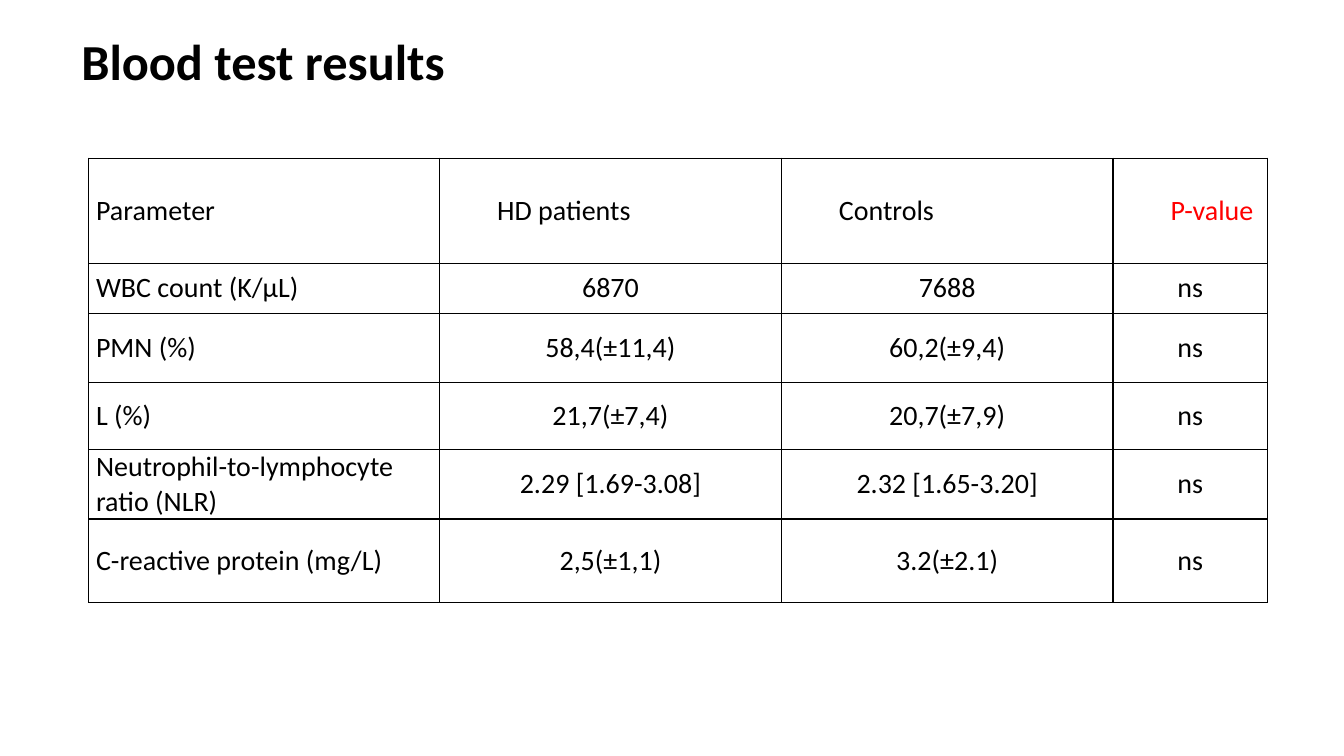
from dataclasses import dataclass

from lxml import etree
from pptx import Presentation
from pptx.dml.color import RGBColor
from pptx.enum import text
from pptx.oxml import ns
from pptx.util import Cm, Pt


@dataclass(frozen=True)
class Theme:
    font: str = "Calibri"
    ink: str = "000000"
    accent: str = "FF0000"
    title_size: int = 36
    body_size: int = 20
    border: float = 1


THEME = Theme()

COLUMN_WIDTHS = (8.84, 8.61, 8.36, 3.89)
ROW_HEIGHTS = (2.64, 1.27, 1.73, 1.7, 1.75, 2.11)
HEADER_INDENT = 1.27

RESULTS = (
    ("Parameter", "HD patients", "Controls", "P-value"),
    ("WBC count (K/μL)", "6870", "7688", "ns"),
    ("PMN (%)", "58,4(±11,4)", "60,2(±9,4)", "ns"),
    ("L (%)", "21,7(±7,4)", "20,7(±7,9)", "ns"),
    ("Neutrophil-to-lymphocyte ratio (NLR)", "2.29 [1.69-3.08]",
     "2.32 [1.65-3.20]", "ns"),
    ("C-reactive protein (mg/L)", "2,5(±1,1)", "3.2(±2.1)", "ns"),
)


def write(p, content, size, color=THEME.ink, bold=False):
    p.text = content
    for r in p.runs:
        r.font.name = THEME.font
        r.font.size = Pt(size)
        r.font.bold = bold
        r.font.color.rgb = RGBColor.from_string(color)


def add_title(s, content):
    tf = s.shapes.add_textbox(Cm(1.8), Cm(0.64), Cm(30.1), Cm(1.8)).text_frame
    tf.word_wrap = True
    write(tf.paragraphs[0], content, THEME.title_size, bold=True)


def add_borders(cell):
    # Border lines must come before the fill in the cell properties
    tc_pr = cell._tc.get_or_add_tcPr()
    for i, side in enumerate(("lnL", "lnR", "lnT", "lnB")):
        line = etree.Element(ns.qn(f"a:{side}"), w=str(Pt(THEME.border)))
        fill = etree.SubElement(line, ns.qn("a:solidFill"))
        etree.SubElement(fill, ns.qn("a:srgbClr"), val=THEME.ink)
        tc_pr.insert(i, line)


def format_cell(cell):
    cell.fill.background()
    cell.vertical_anchor = text.MSO_ANCHOR.MIDDLE
    cell.margin_left = cell.margin_right = Cm(0.18)
    cell.margin_top = cell.margin_bottom = 0
    add_borders(cell)


def add_results_table(s, rows):
    table = s.shapes.add_table(
        len(rows), len(COLUMN_WIDTHS), Cm(2.24), Cm(3.99),
        Cm(sum(COLUMN_WIDTHS)), Cm(sum(ROW_HEIGHTS))).table
    table.first_row = table.horz_banding = False
    for column, width in zip(table.columns, COLUMN_WIDTHS):
        column.width = Cm(width)
    for row, height in zip(table.rows, ROW_HEIGHTS):
        row.height = Cm(height)

    for i, values in enumerate(rows):
        for j, value in enumerate(values):
            cell = table.cell(i, j)
            format_cell(cell)
            p = cell.text_frame.paragraphs[0]
            color = THEME.accent if value == "P-value" else THEME.ink
            write(p, value, THEME.body_size, color)
            # Headings are indented, values are centred
            if j and i == 0:
                p._p.get_or_add_pPr().set("marL", str(Cm(HEADER_INDENT)))
            elif j:
                p.alignment = text.PP_ALIGN.CENTER


def main():
    prs = Presentation()
    prs.slide_width, prs.slide_height = Cm(33.87), Cm(19.05)
    s = prs.slides.add_slide(prs.slide_layouts[6])
    add_results_table(s, RESULTS)
    add_title(s, "Blood test results")
    prs.save("out.pptx")


if __name__ == "__main__":
    main()
